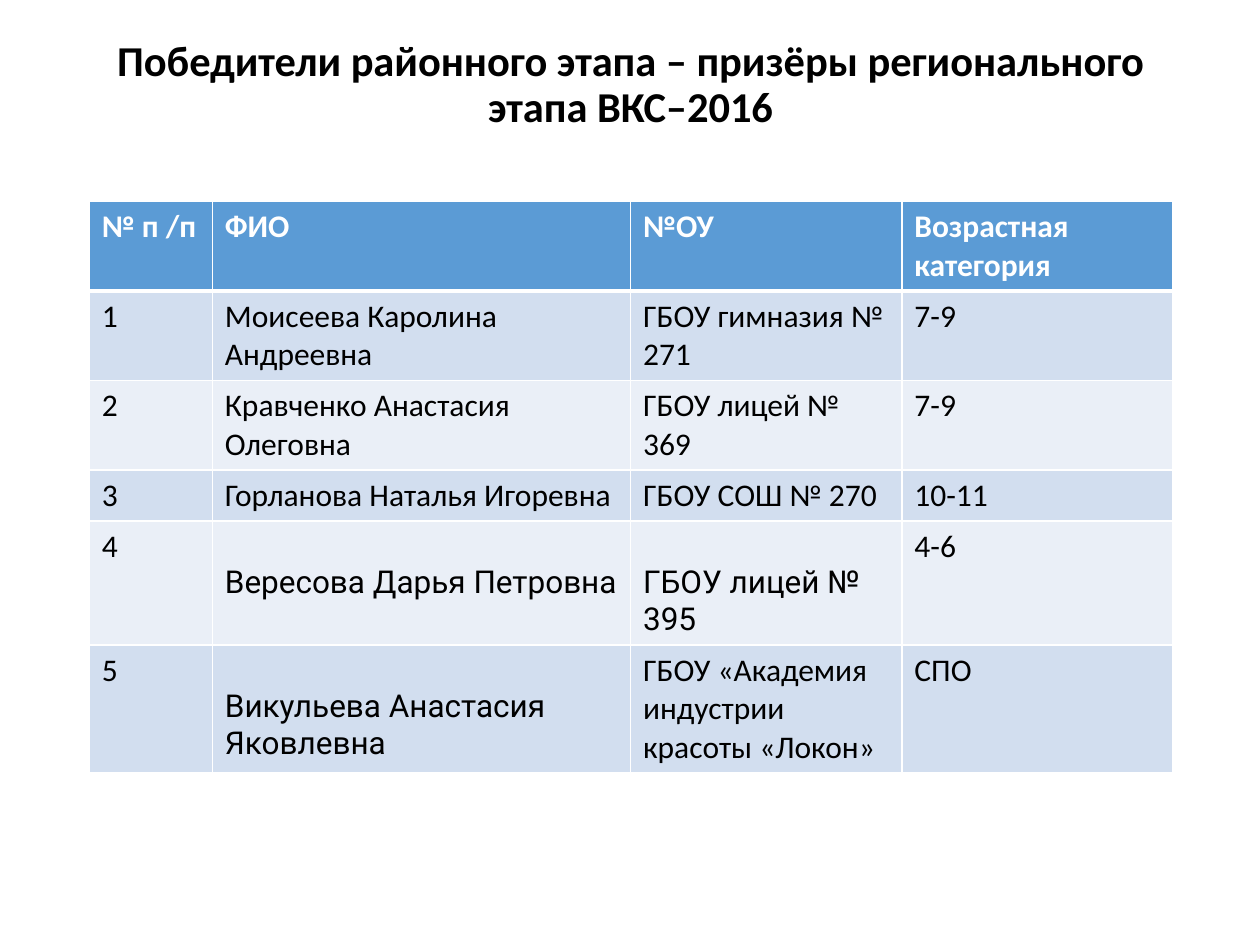
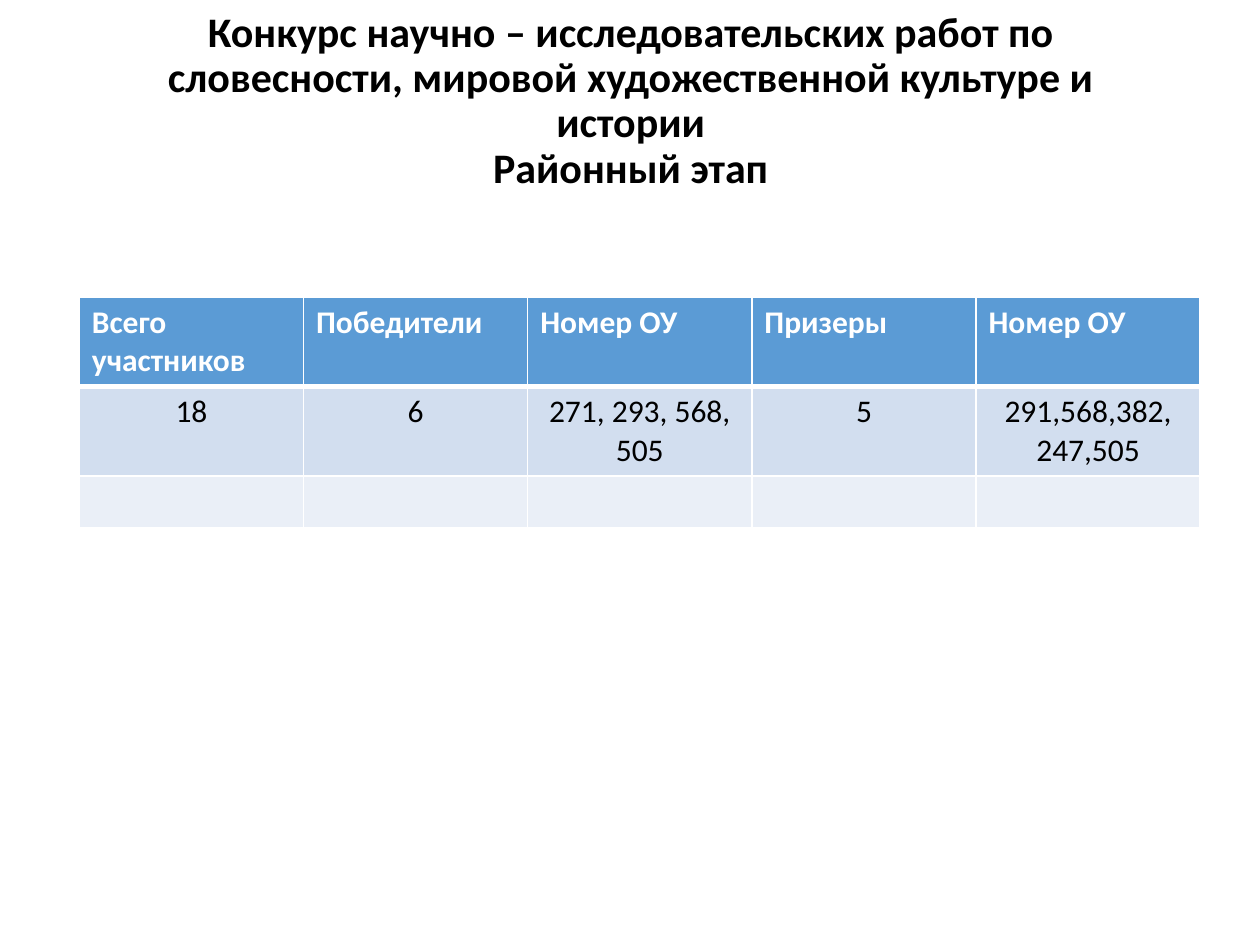
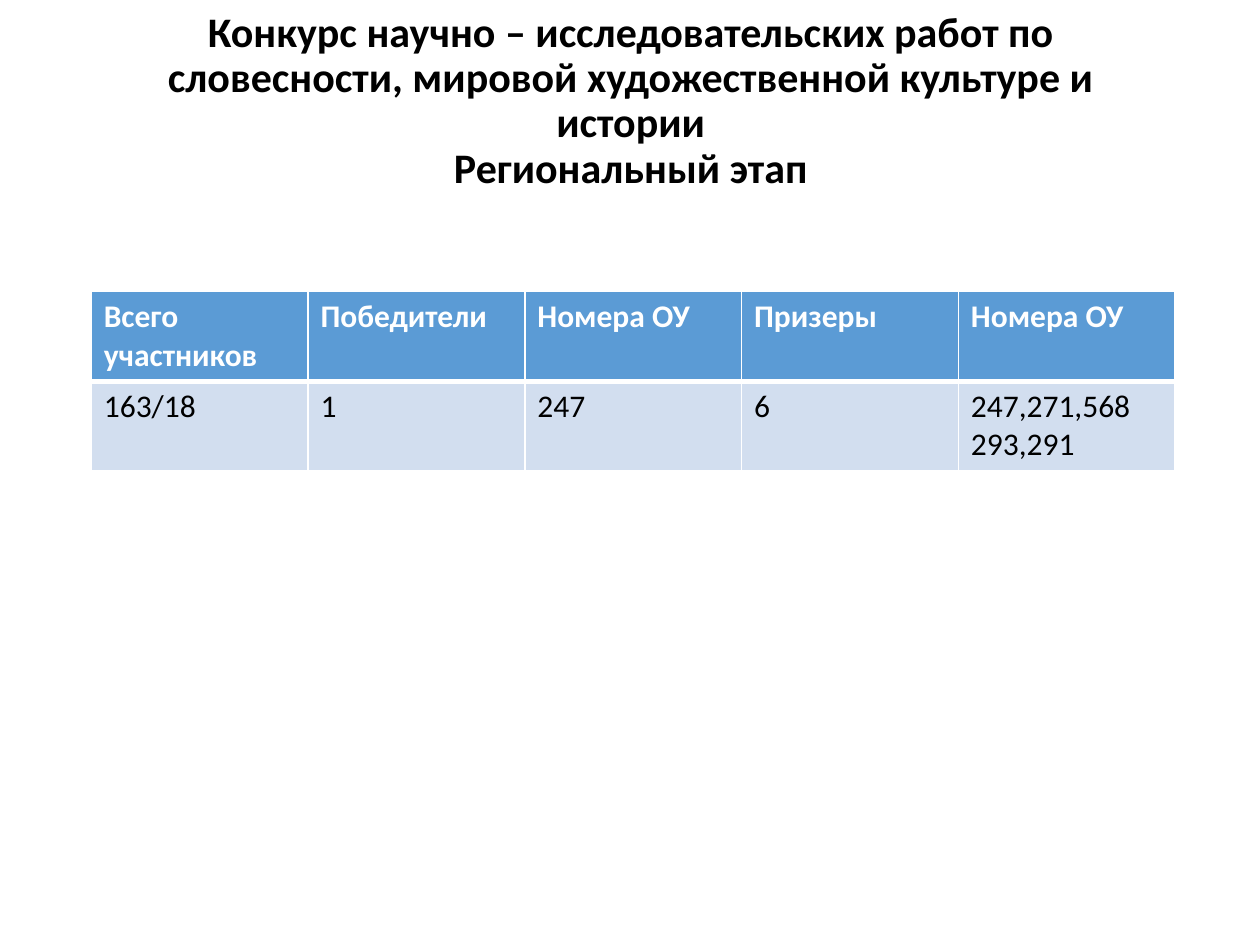
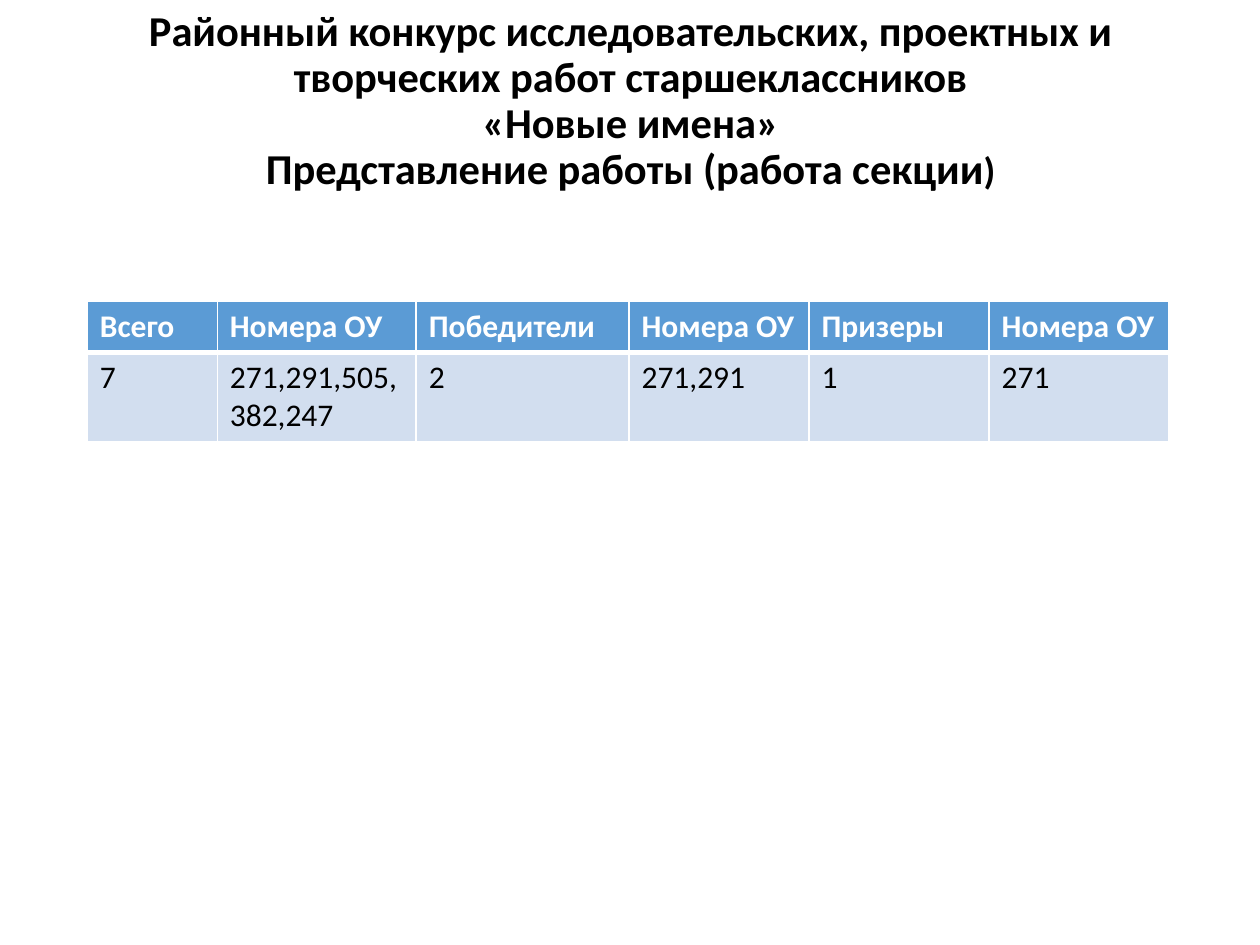
from pptx import Presentation
from pptx.dml.color import RGBColor
from pptx.enum.text import MSO_ANCHOR as Anchor, MSO_AUTO_SIZE as AutoSize, PP_ALIGN as Align
from pptx.oxml.ns import qn
from pptx.util import Cm, Pt
from lxml.etree import SubElement

COLORS = {"title": "000000", "text": "000000", "head_text": "FFFFFF",
          "head": "5B9BD5", "band_dark": "D2DEEF", "band_light": "EAEFF7",
          "border": "FFFFFF"}
FONT = "Calibri"
LOWERED_FONT = "Roboto"
CELL_SIZE = 18
ROW_HEIGHT = 1.03
LOWERED_MARGIN = 0.88
TITLE_AREA = (1.83, 0.69, 21.77, 2.72)

CONTEST = ("Конкурс научно – исследовательских работ по словесности, "
           "мировой художественной культуре и истории")

# Content: lengths in cm; "lowered" cells (row, column) start one line down
SLIDES = [
    {"title": ["Победители районного этапа – призёры регионального этапа ВКС–2016"],
     "size": 24.3, "lift": 0.64,
     "at": (1.8, 4.06), "columns": [2.48, 8.43, 5.47, 5.47],
     "lowered": {(4, 1), (4, 2), (5, 1)},
     "rows": [
         ["№ п /п", "ФИО", "№ОУ", "Возрастная\nкатегория"],
         ["1", "Моисеева Каролина Андреевна", "ГБОУ гимназия № 271", "7-9"],
         ["2", "Кравченко Анастасия Олеговна", "ГБОУ лицей № 369", "7-9"],
         ["3", "Горланова Наталья Игоревна", "ГБОУ СОШ № 270", "10-11"],
         ["4", "Вересова Дарья Петровна", "ГБОУ лицей № 395", "4-6"],
         ["5", "Викульева Анастасия Яковлевна",
          "ГБОУ «Академия индустрии красоты «Локон»", "СПО"],
     ]},
    {"title": [CONTEST, "Районный этап"], "size": 24,
     "at": (1.6, 5.99), "columns": [4.52] * 5, "align": Align.CENTER,
     "rows": [
         ["Всего участников", "Победители", "Номер ОУ", "Призеры", "Номер ОУ"],
         ["18", "6", "271, 293, 568, 505", "5", "291,568,382, 247,505"],
         [""] * 5,
     ]},
    {"title": [CONTEST, "Региональный этап"], "size": 24,
     "at": (1.84, 5.88), "columns": [4.37] * 5,
     "rows": [
         ["Всего участников", "Победители", "Номера ОУ", "Призеры", "Номера ОУ"],
         ["163/18", "1", "247", "6", "247,271,568\n293,291"],
     ]},
    {"title": ["Районный конкурс исследовательских, проектных и творческих работ старшеклассников",
               "«Новые имена»", "Представление работы (работа секции"],
     "size": 24.3, "closing": (")", 21.6),
     "at": (1.76, 6.07), "columns": [2.62, 4.01, 4.29, 3.63, 3.63, 3.63],
     "rows": [
         ["Всего", "Номера ОУ", "Победители", "Номера ОУ", "Призеры", "Номера ОУ"],
         ["7", "271,291,505,382,247", "2", "271,291", "1", "271"],
     ]},
]


def color(name):
    return RGBColor.from_string(COLORS[name])


def set_font(paragraph, name, size, shade, bold):
    font = paragraph.font
    font.name, font.size, font.bold = name, Pt(size), bold
    font.color.rgb = color(shade)


def add_title(page, content):
    box = page.shapes.add_textbox(*map(Cm, TITLE_AREA))
    frame = box.text_frame
    frame.word_wrap = True
    frame.auto_size = AutoSize.NONE
    frame.vertical_anchor = Anchor.MIDDLE
    frame.margin_bottom = Cm(0.13 + content.get("lift", 0))
    para = frame.paragraphs[0]
    para.alignment = Align.CENTER
    para.line_spacing = 0.9
    set_font(para, FONT, content["size"], "title", True)
    for index, line in enumerate(content["title"]):
        if index:
            para.add_line_break()
        para.add_run().text = line
    if "closing" in content:
        span = para.add_run()
        span.text, size = content["closing"]
        span.font.size = Pt(size)


def set_borders(cell, row):
    """White grid with a thicker rule under the header row."""
    widths = {"L": 1, "R": 1, "T": 3 if row == 1 else 1, "B": 3 if row == 0 else 1}
    properties = cell._tc.get_or_add_tcPr()
    for side, width in widths.items():
        line = SubElement(properties, qn(f"a:ln{side}"), w=str(Pt(width)))
        fill = SubElement(line, qn("a:solidFill"))
        SubElement(fill, qn("a:srgbClr"), val=COLORS["border"])


def fill_cell(cell, text, row, lowered, align):
    is_head = row == 0
    set_borders(cell, row)
    cell.fill.solid()
    cell.fill.fore_color.rgb = color(
        "head" if is_head else "band_dark" if row % 2 else "band_light")
    if lowered:
        cell.margin_top = Cm(LOWERED_MARGIN)
    cell.text = text
    for para in cell.text_frame.paragraphs:
        if not is_head:
            para.alignment = align
        set_font(para, LOWERED_FONT if lowered else FONT, CELL_SIZE,
                 "head_text" if is_head else "text", is_head)


def add_grid(page, content):
    rows, columns = content["rows"], content["columns"]
    left, top = content["at"]
    table = page.shapes.add_table(
        len(rows), len(columns), Cm(left), Cm(top),
        Cm(sum(columns)), Cm(ROW_HEIGHT * len(rows))).table
    for column, width in zip(table.columns, columns):
        column.width = Cm(width)
    for row, texts in enumerate(rows):
        for column, text in enumerate(texts):
            fill_cell(table.cell(row, column), text, row,
                      (row, column) in content.get("lowered", ()),
                      content.get("align"))


def main():
    deck = Presentation()
    deck.slide_width, deck.slide_height = Cm(25.4), Cm(19.05)
    for content in SLIDES:
        page = deck.slides.add_slide(deck.slide_layouts[6])
        add_title(page, content)
        add_grid(page, content)
    deck.save("out.pptx")


if __name__ == "__main__":
    main()
